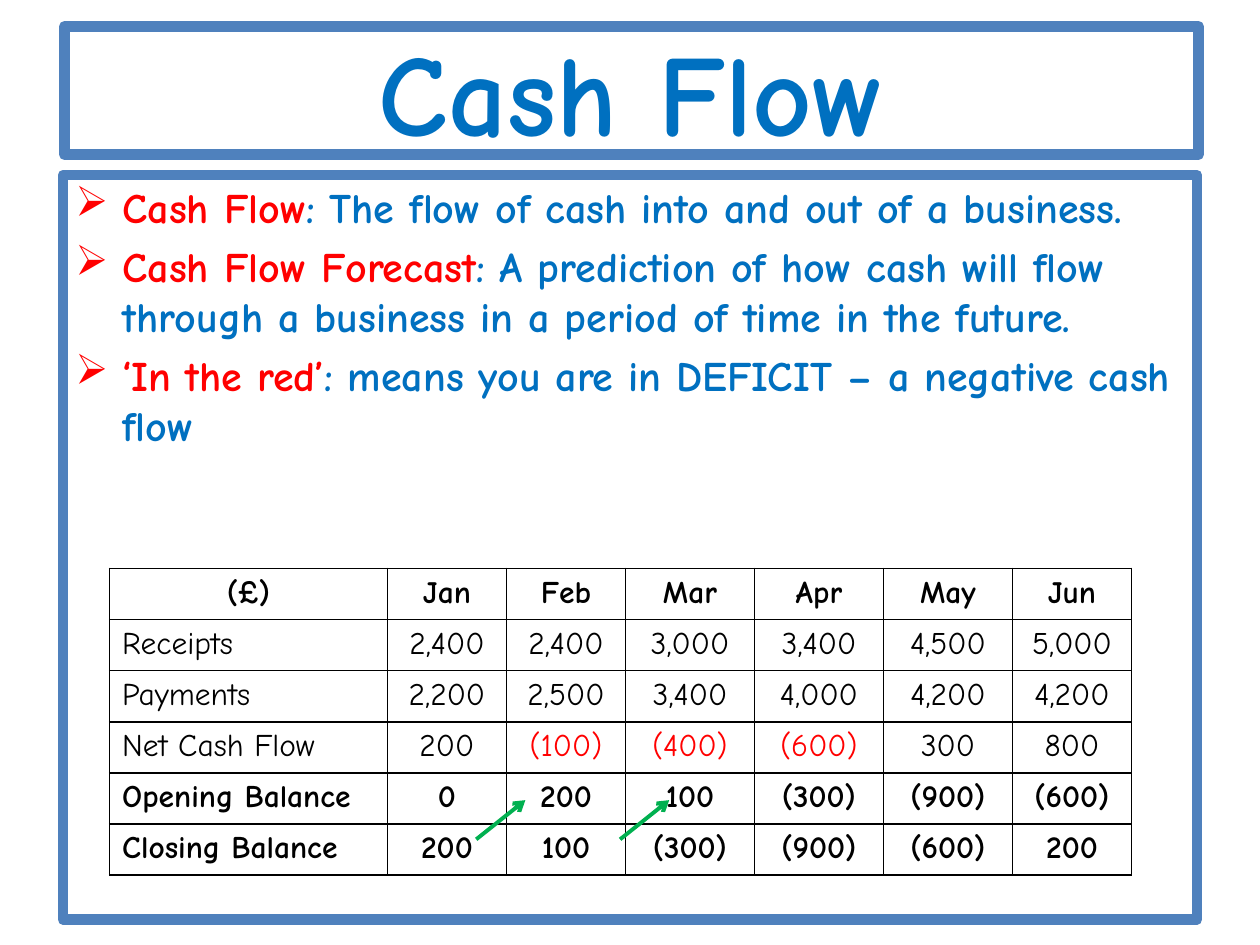
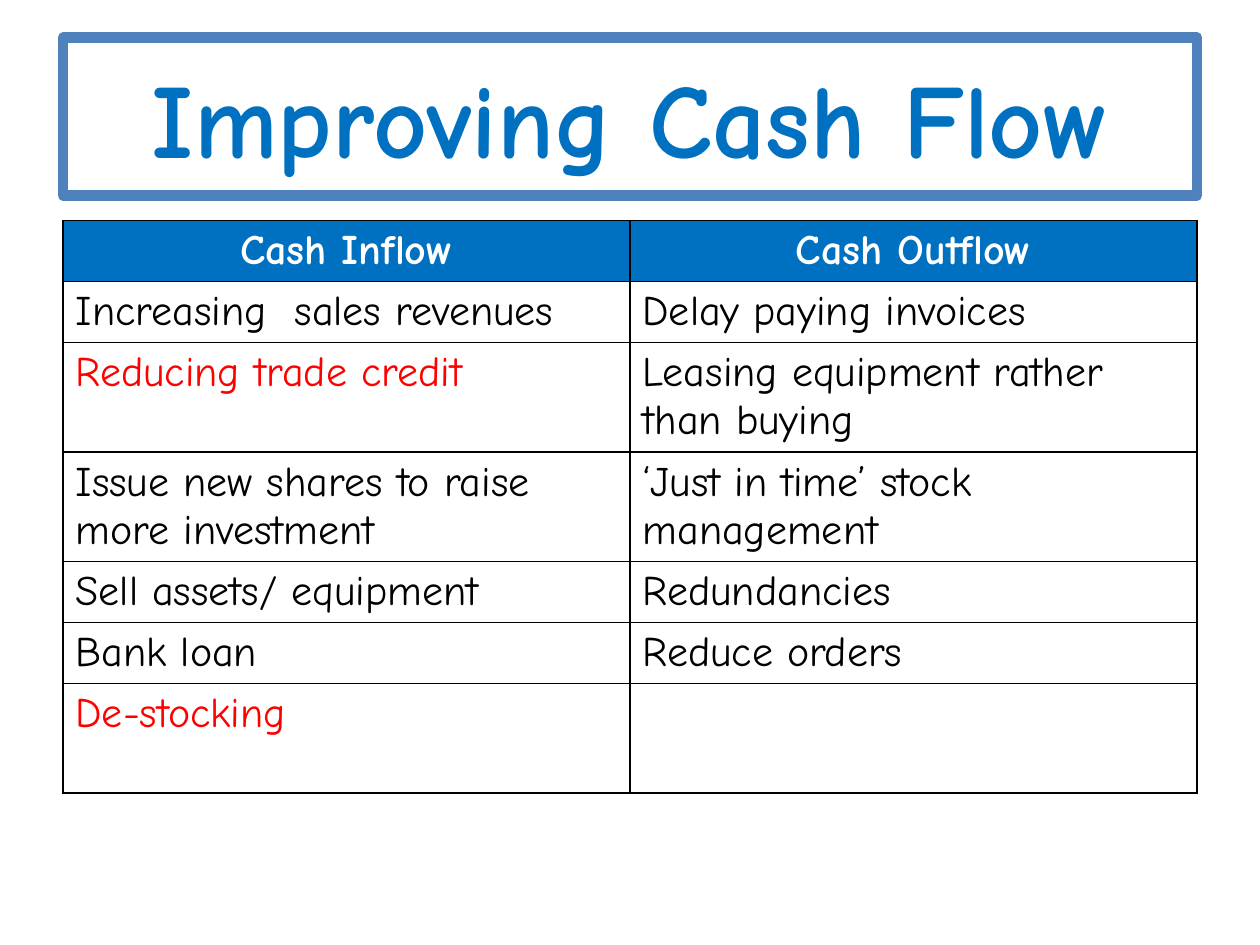
from lxml import etree
from pptx import Presentation
from pptx.dml.color import RGBColor
from pptx.enum.shapes import MSO_CONNECTOR, MSO_SHAPE
from pptx.enum.text import MSO_ANCHOR, MSO_AUTO_SIZE, PP_ALIGN
from pptx.oxml.ns import qn
from pptx.util import Cm, Pt

RECT, STRAIGHT = MSO_SHAPE.RECTANGLE, MSO_CONNECTOR.STRAIGHT
TOP, MIDDLE = MSO_ANCHOR.TOP, MSO_ANCHOR.MIDDLE
LEFT, CENTER = PP_ALIGN.LEFT, PP_ALIGN.CENTER
NO_FIT = MSO_AUTO_SIZE.NONE
TITLE_ONLY = 5
FONT = "Comic Neue"
COLORS = {
    "frame": "4F81BD",
    "blue": "0070C0",
    "red": "FF0000",
    "green": "00B050",
    "black": "000000",
    "white": "FFFFFF",
}

DEFINITIONS = [
    ("Cash Flow", ": The flow of cash into and out of a business."),
    ("Cash Flow Forecast",
     ": A prediction of how cash will flow through a business in a period of time in the future."),
    ("‘In the red’", ": means you are in DEFICIT – a negative cash flow"),
]
FORECAST = [
    ["(£)", "Jan", "Feb", "Mar", "Apr", "May", "Jun"],
    ["Receipts", "2,400", "2,400", "3,000", "3,400", "4,500", "5,000"],
    ["Payments", "2,200", "2,500", "3,400", "4,000", "4,200", "4,200"],
    ["Net Cash Flow", "200", "(100)", "(400)", "(600)", "300", "800"],
    ["Opening Balance", "0", "200", "100", "(300)", "(900)", "(600)"],
    ["Closing Balance", "200", "100", "(300)", "(900)", "(600)", "200"],
]
IMPROVEMENTS = [
    ["Cash Inflow", "Cash Outflow"],
    ["Increasing  sales revenues", "Delay paying invoices"],
    ["Reducing trade credit", "Leasing equipment rather than buying"],
    ["Issue new shares to raise more investment", "‘Just in time’ stock management"],
    ["Sell assets/ equipment", "Redundancies"],
    ["Bank loan", "Reduce orders"],
    ["De-stocking", ""],
]
STOCK_AND_CREDIT = {"Reducing trade credit", "De-stocking"}


def rgb(name):
    return RGBColor.from_string(COLORS[name])


def add_run(p, text, size, color, bold):
    r = p.add_run()
    r.text = text
    r.font.name = FONT
    r.font.size = Pt(size)
    r.font.bold = bold
    r.font.color.rgb = rgb(color)


def frame(sp, anchor):
    sp.fill.solid()
    sp.fill.fore_color.rgb = rgb("white")
    sp.line.color.rgb = rgb("frame")
    sp.line.width = Pt(6)
    tf = sp.text_frame
    tf.word_wrap = True
    tf.auto_size = NO_FIT
    tf.vertical_anchor = anchor
    return tf


def add_title(s, box, text, size):
    sp = s.shapes.title
    sp.left, sp.top, sp.width, sp.height = map(Cm, box)
    p = frame(sp, MIDDLE).paragraphs[0]
    p.alignment = CENTER
    add_run(p, text, size, "blue", True)


def add_definitions(s, box, definitions):
    sp = s.shapes.add_shape(RECT, *map(Cm, box))
    sp.shadow.inherit = False
    tf = frame(sp, TOP)
    for i, (term, meaning) in enumerate(definitions):
        p = tf.add_paragraph() if i else tf.paragraphs[0]
        p.alignment = LEFT
        pPr = p._p.get_or_add_pPr()
        pPr.set("marL", str(Cm(0.95)))
        pPr.set("indent", str(-Cm(0.95)))
        etree.SubElement(pPr, qn("a:buChar"), char="➢")
        if i:
            p.space_before = Pt(4.8)
        add_run(p, term, 24, "red", True)
        add_run(p, meaning, 24, "blue", True)


def add_borders(cell):
    tcPr = cell._tc.get_or_add_tcPr()
    for i, side in enumerate(("lnL", "lnR", "lnT", "lnB")):
        ln = etree.Element(qn(f"a:{side}"), w=str(Pt(1)))
        fill = etree.SubElement(ln, qn("a:solidFill"))
        etree.SubElement(fill, qn("a:srgbClr"), val=COLORS["black"])
        tcPr.insert(i, ln)


def add_grid(s, left, top, widths, heights, rows, size, style):
    box = (left, top, sum(widths), sum(heights))
    table = s.shapes.add_table(len(heights), len(widths), *map(Cm, box)).table
    table.first_row = table.horz_banding = False
    for column, width in zip(table.columns, widths):
        column.width = Cm(width)
    for row, height in zip(table.rows, heights):
        row.height = Cm(height)
    for i, texts in enumerate(rows):
        for j, text in enumerate(texts):
            fill, color, bold, align = style(i, j, text)
            cell = table.cell(i, j)
            cell.fill.solid()
            cell.fill.fore_color.rgb = rgb(fill)
            add_borders(cell)
            if text:
                p = cell.text_frame.paragraphs[0]
                p.alignment = align
                add_run(p, text, size, color, bold)


def forecast_style(i, j, text):
    negative_flow = FORECAST[i][0] == "Net Cash Flow" and text.startswith("(")
    color = "red" if negative_flow else "black"
    return "white", color, i in (0, 4, 5), CENTER if i == 0 or j else LEFT


def improvement_style(i, j, text):
    if i == 0:
        return "blue", "white", True, CENTER
    return "white", "red" if text in STOCK_AND_CREDIT else "black", False, LEFT


def add_carry_arrow(s, left, top):
    line = s.shapes.add_connector(
        STRAIGHT, Cm(left), Cm(top + 0.79), Cm(left + 0.99), Cm(top))
    line.line.color.rgb = rgb("green")
    line.line.width = Pt(2.25)
    etree.SubElement(line.line._get_or_add_ln(), qn("a:tailEnd"), type="arrow")
    etree.SubElement(line._element.spPr, qn("a:effectLst"))


def add_forecast(s, left, top):
    widths = [5.6, 2.4, 2.4, 2.6, 2.6, 2.6, 2.4]
    add_grid(s, left, top, widths, [1.03] * len(FORECAST), FORECAST, 18, forecast_style)
    for month in range(2):
        add_carry_arrow(s, left + 7.39 + 2.9 * month, top + 4.67)


def build_cash_flow(prs):
    s = prs.slides.add_slide(prs.slide_layouts[TITLE_ONLY])
    add_title(s, (1.3, 0.53, 22.86, 2.59), "Cash Flow", 66)
    add_definitions(s, (1.27, 3.53, 22.86, 15.01), DEFINITIONS)
    add_forecast(s, 2.21, 11.46)


def build_improving(prs):
    s = prs.slides.add_slide(prs.slide_layouts[TITLE_ONLY])
    add_title(s, (1.27, 0.76, 22.86, 3.18), "Improving Cash Flow", 60)
    one_line, two_lines = 1.23, 2.21
    heights = [two_lines if i in (2, 3, 6) else one_line for i in range(len(IMPROVEMENTS))]
    add_grid(s, 1.27, 4.44, [11.43] * 2, heights, IMPROVEMENTS, 24, improvement_style)


def main():
    prs = Presentation()
    prs.slide_width, prs.slide_height = Cm(25.4), Cm(19.05)
    build_cash_flow(prs)
    build_improving(prs)
    prs.save("out.pptx")


if __name__ == "__main__":
    main()
